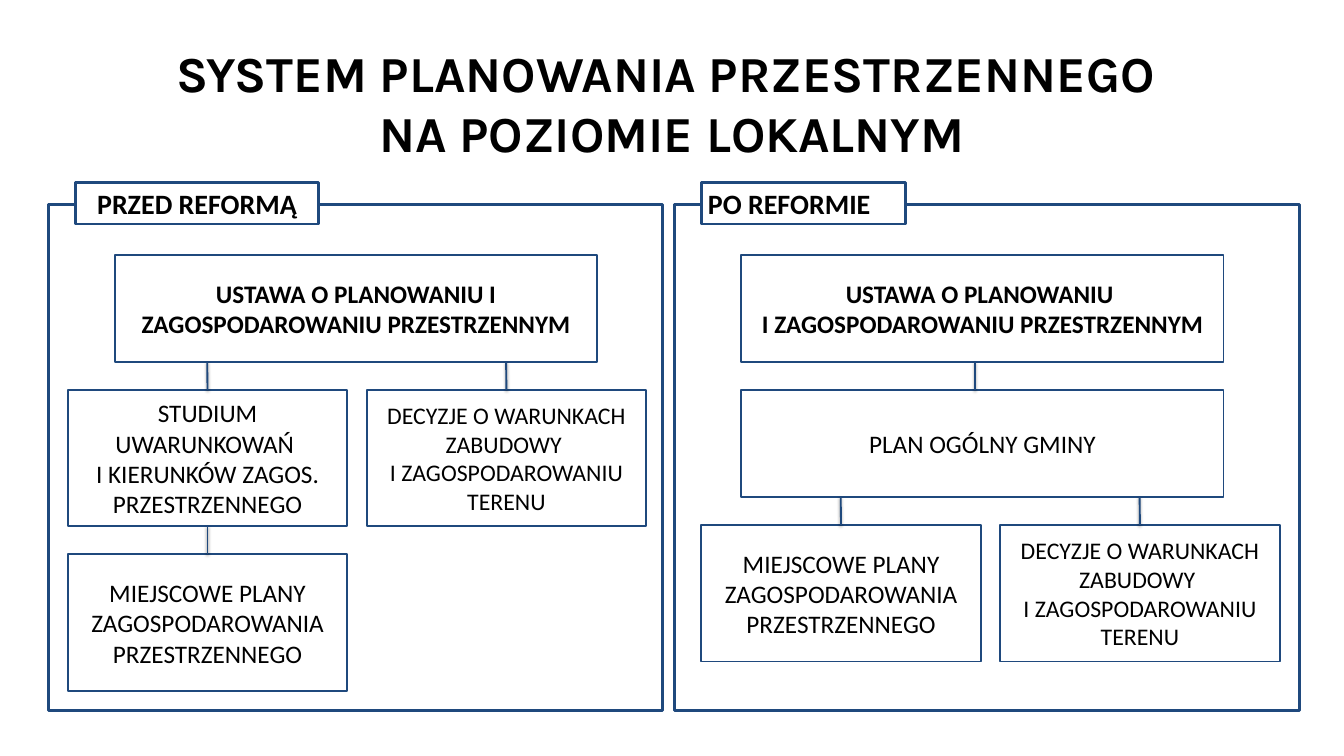
"""Build a slide comparing local spatial planning before and after the reform."""
from dataclasses import dataclass
from typing import Optional

from pptx import Presentation
from pptx.dml.color import RGBColor
from pptx.enum.shapes import MSO_CONNECTOR, MSO_SHAPE
from pptx.enum.text import MSO_ANCHOR, MSO_AUTO_SIZE, PP_ALIGN
from pptx.util import Pt

PX = 9525
RECT = MSO_SHAPE.RECTANGLE
STRAIGHT = MSO_CONNECTOR.STRAIGHT
LEFT, CENTER = PP_ALIGN.LEFT, PP_ALIGN.CENTER
MIDDLE = MSO_ANCHOR.MIDDLE
NO_AUTOFIT = MSO_AUTO_SIZE.NONE
TOP_SITE, BOTTOM_SITE = 0, 2


@dataclass(frozen=True)
class Theme:
    ink: RGBColor = RGBColor(0x00, 0x00, 0x00)
    paper: RGBColor = RGBColor(0xFF, 0xFF, 0xFF)
    edge: RGBColor = RGBColor(0x1F, 0x49, 0x7D)
    title_font: str = "Karla"
    body_font: str = "Calibri"
    title: float = 54
    tag: float = 30
    body: float = 27
    small: float = 25.5
    frame_line: float = 3
    box_line: float = 2


THEME = Theme()


@dataclass(frozen=True)
class Box:
    x: int
    y: int
    w: int
    h: int
    text: str = ""
    size: float = THEME.body
    bold: bool = False
    align: PP_ALIGN = CENTER
    line: float = THEME.box_line

    @property
    def mid(self) -> int:
        return self.x + self.w // 2

    @property
    def bottom(self) -> int:
        return self.y + self.h


@dataclass(frozen=True)
class Link:
    parent: Box
    child: Box
    x: Optional[int] = None


def wide(x: int, y: int, text: str, bold: bool = False) -> Box:
    """Describe a box for an act or a general plan."""
    return Box(x, y, 689, 153, text, bold=bold)


def narrow(x: int, y: int, text: str, size: float = THEME.body) -> Box:
    """Describe a box for a lower-level document."""
    return Box(x, y, 399, 195, text, size)


def frame(x: int, w: int) -> Box:
    """Describe the outer frame of one half."""
    return Box(x, 292, w, 723, line=THEME.frame_line)


def tag(x: int, w: int, text: str, align: PP_ALIGN = CENTER) -> Box:
    """Describe the heading that sits on a frame."""
    return Box(x, 261, w, 59, text, THEME.tag, True, align, THEME.frame_line)


LOCAL_PLANS = "MIEJSCOWE PLANY ZAGOSPODAROWANIA PRZESTRZENNEGO"
DECISIONS = "DECYZJE O WARUNKACH ZABUDOWY \nI ZAGOSPODAROWANIU TERENU"
TITLE = "SYSTEM PLANOWANIA PRZESTRZENNEGO \nNA POZIOMIE LOKALNYM"

OLD_ACT = wide(164, 364, "USTAWA O PLANOWANIU I ZAGOSPODAROWANIU PRZESTRZENNYM", True)
OLD_STUDY = narrow(97, 557, "STUDIUM UWARUNKOWAŃ \nI KIERUNKÓW ZAGOS. PRZESTRZENNEGO")
OLD_DECISIONS = narrow(524, 557, DECISIONS, THEME.small)
OLD_PLANS = narrow(97, 792, LOCAL_PLANS)
NEW_ACT = wide(1059, 364, "USTAWA O PLANOWANIU \nI ZAGOSPODAROWANIU PRZESTRZENNYM", True)
NEW_GENERAL = wide(1059, 557, "PLAN OGÓLNY GMINY")
NEW_PLANS = narrow(1002, 750, LOCAL_PLANS)
NEW_DECISIONS = narrow(1429, 750, DECISIONS, THEME.small)

BOXES = (
    frame(964, 892), frame(69, 878),
    tag(108, 347, "PRZED REFORMĄ"), tag(1002, 292, "PO REFORMIE", LEFT),
    OLD_ACT, OLD_STUDY, OLD_DECISIONS, OLD_PLANS,
    NEW_ACT, NEW_GENERAL, NEW_PLANS, NEW_DECISIONS,
)
LINKS = (
    Link(OLD_ACT, OLD_STUDY), Link(OLD_ACT, OLD_DECISIONS),
    Link(OLD_STUDY, OLD_PLANS), Link(NEW_ACT, NEW_GENERAL, 1393),
    Link(NEW_GENERAL, NEW_PLANS), Link(NEW_GENERAL, NEW_DECISIONS),
)


def write(tf, text: str, *, size: float, font: str = THEME.body_font,
          bold: bool = False, align: PP_ALIGN = CENTER) -> None:
    """Fill a text frame with one formatted paragraph."""
    tf.word_wrap = True
    tf.auto_size = NO_AUTOFIT
    tf.vertical_anchor = MIDDLE
    p = tf.paragraphs[0]
    p.text = text
    p.alignment = align
    for r in p.runs:
        r.font.name = font
        r.font.size = Pt(size)
        r.font.bold = bold
        r.font.color.rgb = THEME.ink


def draw_box(s, box: Box):
    """Draw an outlined rectangle with its text."""
    sp = s.shapes.add_shape(RECT, box.x * PX, box.y * PX, box.w * PX, box.h * PX)
    sp.shadow.inherit = False
    sp.fill.solid()
    sp.fill.fore_color.rgb = THEME.paper
    sp.line.color.rgb = THEME.edge
    sp.line.width = Pt(box.line)
    if box.text:
        write(sp.text_frame, box.text, size=box.size, bold=box.bold, align=box.align)
    return sp


def draw_link(s, link: Link, shapes: dict) -> None:
    """Draw a vertical line, joined where it meets the middle of a side."""
    x = link.child.mid if link.x is None else link.x
    cx = s.shapes.add_connector(STRAIGHT, x * PX, link.parent.bottom * PX,
                                x * PX, link.child.y * PX)
    if x == link.parent.mid:
        cx.begin_connect(shapes[link.parent], BOTTOM_SITE)
    if x == link.child.mid:
        cx.end_connect(shapes[link.child], TOP_SITE)
    cx.line.color.rgb = THEME.edge
    cx.line.width = Pt(THEME.box_line)


def main() -> None:
    """Build and save the slide."""
    prs = Presentation()
    prs.slide_width, prs.slide_height = 1920 * PX, 1080 * PX
    s = prs.slides.add_slide(prs.slide_layouts[5])
    title = s.shapes.title
    title.left, title.top = 0, 45 * PX
    title.width, title.height = 1920 * PX, 203 * PX
    write(title.text_frame, TITLE, size=THEME.title, font=THEME.title_font, bold=True)
    shapes = {box: draw_box(s, box) for box in BOXES}
    for link in LINKS:
        draw_link(s, link, shapes)
    prs.save("out.pptx")


if __name__ == "__main__":
    main()
